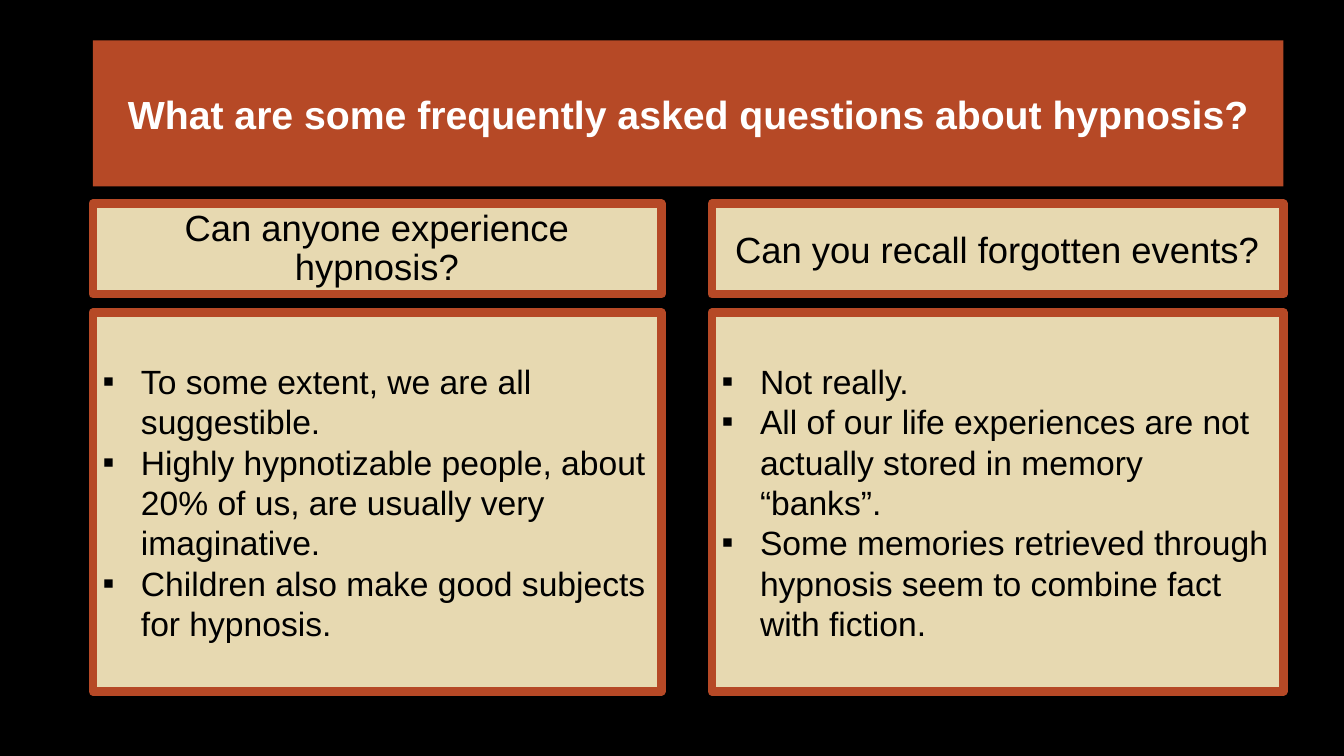
from pptx import Presentation
from pptx.dml.color import RGBColor
from pptx.enum.shapes import MSO_SHAPE as Shape
from pptx.enum.text import MSO_ANCHOR as Anchor, PP_ALIGN as Align
from pptx.oxml.ns import qn
from pptx.util import Inches, Pt
from lxml.etree import SubElement

COLORS = {"back": "000000", "rust": "B64926", "sand": "E7D9B1",
          "white": "FFFFFF", "black": "000000"}
FONT = "Arial"
LEFT, GAP = 0.92, 0.5
TITLE_TOP, TITLE_HEIGHT = 0.4, 1.45
HEAD_TOP, HEAD_HEIGHT = 2.02, 0.9
LIST_TOP, LIST_HEIGHT = 3.1, 3.76
COLUMNS = [
    (5.64, 0.9, "Can anyone experience hypnosis?", [
        "To some extent, we are all suggestible.",
        "Highly hypnotizable people, about 20% of us, are usually very imaginative.",
        "Children also make good subjects for hypnosis."]),
    (5.67, 1.0, "Can you recall forgotten events?", [
        "Not really.",
        "All of our life experiences are not actually stored in memory “banks”.",
        "Some memories retrieved through hypnosis seem to combine fact with fiction."]),
]


def color(name):
    return RGBColor.from_string(COLORS[name])


def add_panel(page, box, fill, border=None):
    panel = page.shapes.add_shape(Shape.RECTANGLE, *map(Inches, box))
    panel.shadow.inherit = False
    panel.fill.solid()
    panel.fill.fore_color.rgb = color(fill)
    if border:
        panel.line.color.rgb = color(border)
        panel.line.width = Pt(6)
        SubElement(panel.line._get_or_add_ln(), qn("a:round"))
    else:
        panel.line.fill.background()
    panel.text_frame.word_wrap = True
    panel.text_frame.vertical_anchor = Anchor.MIDDLE
    return panel.text_frame


def add_text(para, text, size, ink, align, bold=False):
    para.alignment = align
    span = para.add_run()
    span.text = text
    span.font.name = FONT
    span.font.size = Pt(size)
    span.font.bold = bold
    span.font.color.rgb = color(ink)


def add_bullet(para):
    props = para._p.get_or_add_pPr()
    props.set("marL", str(Inches(0.38)))
    props.set("indent", str(-Inches(0.38)))
    SubElement(props, qn("a:buFont"), typeface=FONT)
    SubElement(props, qn("a:buChar"), char="▪")


def add_title(page, box):
    frame = add_panel(page, box, "rust")
    add_text(frame.paragraphs[0], "What are some frequently asked questions about hypnosis?",
             28, "white", Align.CENTER, True)


def add_heading(page, box, text, spacing):
    para = add_panel(page, box, "sand", "rust").paragraphs[0]
    para.line_spacing = spacing
    add_text(para, text, 26, "black", Align.CENTER)


def add_list(page, box, items):
    frame = add_panel(page, box, "sand", "rust")
    for index, item in enumerate(items):
        para = frame.add_paragraph() if index else frame.paragraphs[0]
        add_text(para, item, 24, "black", Align.LEFT)
        add_bullet(para)


def main():
    deck = Presentation()
    deck.slide_width, deck.slide_height = Inches(13.33), Inches(7.5)
    page = deck.slides.add_slide(deck.slide_layouts[6])
    page.background.fill.solid()
    page.background.fill.fore_color.rgb = color("back")
    full_width = sum(column[0] for column in COLUMNS) + GAP
    add_title(page, (LEFT, TITLE_TOP, full_width, TITLE_HEIGHT))
    left = LEFT
    for width, spacing, heading, items in COLUMNS:
        add_heading(page, (left, HEAD_TOP, width, HEAD_HEIGHT), heading, spacing)
        add_list(page, (left, LIST_TOP, width, LIST_HEIGHT), items)
        left += width + GAP
    deck.save("out.pptx")


if __name__ == "__main__":
    main()
